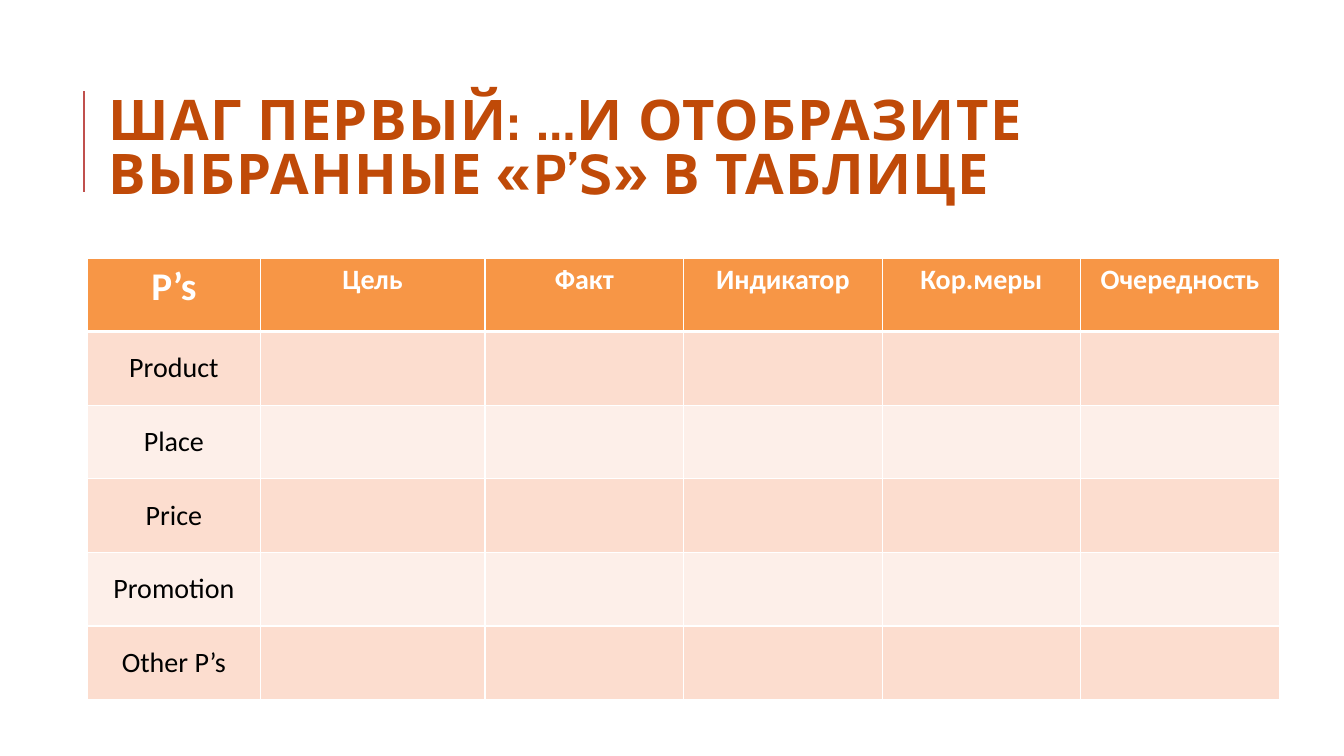
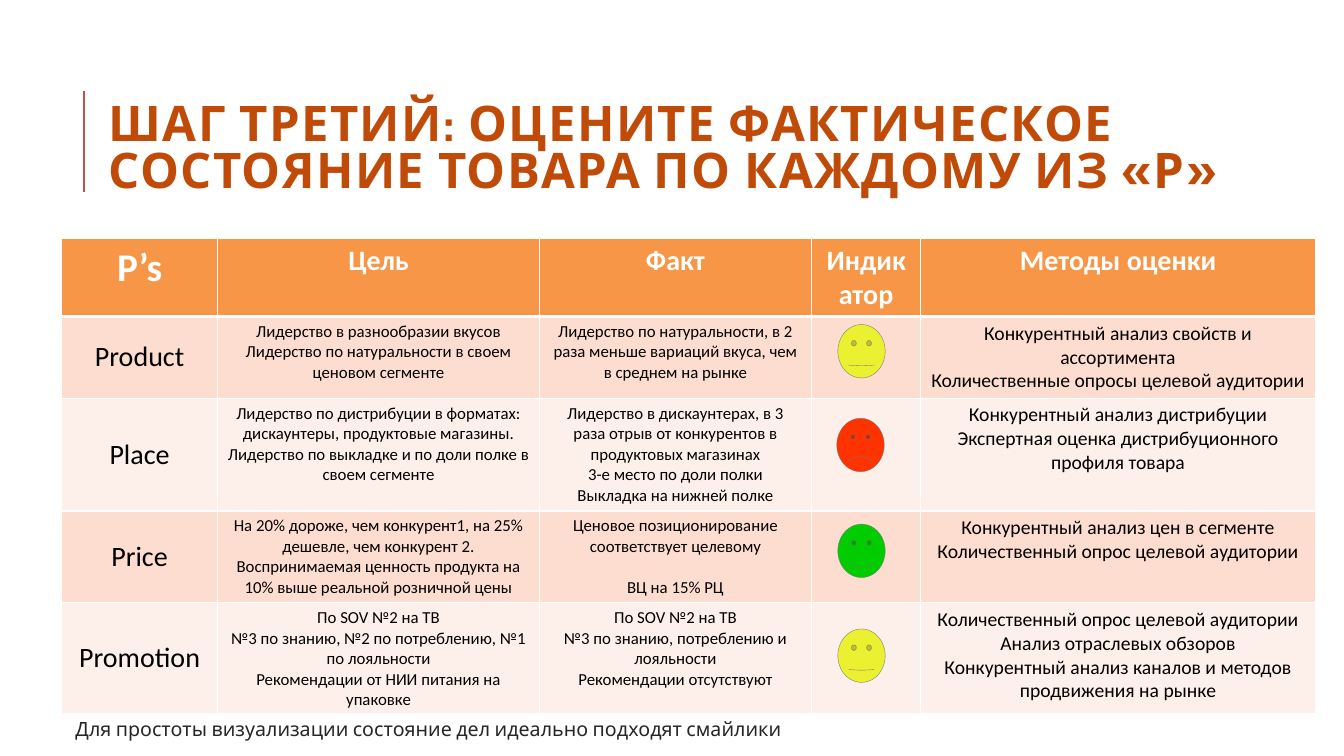
import dataclasses
import typing

import lxml.etree
import pptx
import pptx.dml.color
import pptx.enum.shapes
import pptx.enum.text
import pptx.oxml.ns
import pptx.util

Pt = pptx.util.Pt
Align = pptx.enum.text.PP_ALIGN
Anchor = pptx.enum.text.MSO_ANCHOR
Kind = pptx.enum.shapes.MSO_SHAPE
qn = pptx.oxml.ns.qn

# Shared look
RUST, RED, INK = "C04A08", "C0504D", "262626"
WHITE, BLACK, GREY = "FFFFFF", "000000", "777777"
HEAD, BANDS = "F79646", ("FCDDCF", "FDEFE9")
GREEN, YELLOW, ALERT = "00CC00", "EBF031", "FF3300"
TITLE, BODY = "Cabin", "Calibri"


@dataclasses.dataclass
class Grid:
    left: int
    top: int
    cols: list[int]
    rows: list[int]
    sizes: list[int]  # body text size by column
    cells: list[list[str]]


@dataclasses.dataclass
class Face:
    left: int
    top: int
    fill: str
    mouth: float


def px(n: int) -> int:
    """100 px to the inch."""
    return n * 9144


def rgb(code: str) -> pptx.dml.color.RGBColor:
    return pptx.dml.color.RGBColor.from_string(code)


def style(para: typing.Any, face: str, size: int, color: str, bold: bool = False) -> None:
    for run in para.runs:
        font = run.font
        font.name, font.size, font.bold = face, Pt(size), bold
        font.color.rgb = rgb(color)


def label(slide: typing.Any, box: tuple[int, int, int, int], text: str,
          size: int, color: str, lead: float, bold: bool = False) -> typing.Any:
    frame = slide.shapes.add_textbox(*map(px, box)).text_frame
    frame.word_wrap = True
    frame.vertical_anchor = Anchor.MIDDLE
    frame.text = text
    para = frame.paragraphs[0]
    para.line_spacing = lead
    style(para, TITLE, size, color, bold)
    return para


def start(deck: typing.Any, text: str, size: int) -> typing.Any:
    """Add a slide with the side rule and the title."""
    slide = deck.slides.add_slide(deck.slide_layouts[6])
    rule = slide.shapes.add_connector(
        pptx.enum.shapes.MSO_CONNECTOR.STRAIGHT, px(83), px(190), px(83), px(90))
    rule.line.color.rgb = rgb(RED)
    rule.line.width = Pt(1.5)
    lxml.etree.SubElement(rule._element.spPr, qn("a:effectLst"))
    para = label(slide, (98, 68, 1221, 164), text, size, RUST, 0.8, True)
    for run in para.runs:
        run.font._element.set("spc", "100")
    return slide


def border(cell: typing.Any, top: int, base: int) -> None:
    props = cell._tc.get_or_add_tcPr()
    widths = {"lnL": 1, "lnR": 1, "lnT": top, "lnB": base}
    for i, (tag, width) in enumerate(widths.items()):
        line = lxml.etree.Element(qn("a:" + tag), w=str(Pt(width)))
        fill = lxml.etree.SubElement(line, qn("a:solidFill"))
        lxml.etree.SubElement(fill, qn("a:srgbClr"), val=WHITE)
        props.insert(i, line)


def table(slide: typing.Any, grid: Grid) -> typing.Any:
    tab = slide.shapes.add_table(
        len(grid.rows), len(grid.cols), px(grid.left), px(grid.top),
        px(sum(grid.cols)), px(sum(grid.rows))).table
    for col, width in zip(tab.columns, grid.cols):
        col.width = px(width)
    for r, (row, high) in enumerate(zip(tab.rows, grid.rows)):
        row.height = px(high)
        head = r == 0
        for c, cell in enumerate(row.cells):
            cell.fill.solid()
            cell.fill.fore_color.rgb = rgb(HEAD if head else BANDS[(r - 1) % 2])
            border(cell, 3 if r == 1 else 1, 3 if head else 1)
            if c >= len(grid.cells[r]) or not grid.cells[r][c]:
                continue
            if c == 0 and not head:
                cell.vertical_anchor = Anchor.MIDDLE
            cell.text_frame.text = grid.cells[r][c]
            size = (20 if c else 28) if head else grid.sizes[c]
            for para in cell.text_frame.paragraphs:
                para.alignment = Align.CENTER
                style(para, BODY, size, WHITE if head else BLACK, head)
    return tab


def smile(slide: typing.Any, face: Face) -> None:
    shape = slide.shapes.add_shape(
        Kind.SMILEY_FACE, px(face.left), px(face.top), px(47), px(53))
    shape.shadow.inherit = False
    shape.adjustments[0] = face.mouth
    shape.fill.solid()
    shape.fill.fore_color.rgb = rgb(face.fill)
    shape.line.color.rgb = rgb(GREY)
    shape.line.width = Pt(0.25)


# Content
PLAN = Grid(
    87, 256, [171, 223] + [197] * 4, [73] * 6, [20] * 6,
    [["P’s", "Цель", "Факт", "Индикатор", "Кор.меры", "Очередность"],
     ["Product"], ["Place"], ["Price"], ["Promotion"], ["Other P’s"]])

STATE = Grid(
    61, 237, [155, 319, 270, 108, 392], [77, 81, 112, 91, 110], [20, 12, 12, 12, 14],
    [["P’s", "Цель", "Факт", "Индикатор", "Методы оценки"],
     ["Product",
      "Лидерство в разнообразии вкусов\n"
      "Лидерство по натуральности в своем ценовом сегменте",
      "Лидерство по натуральности, в 2 раза меньше вариаций вкуса, чем в среднем на рынке",
      "",
      "Конкурентный анализ свойств и ассортимента\n"
      "Количественные опросы целевой аудитории"],
     ["Place",
      "Лидерство по дистрибуции в форматах: дискаунтеры, продуктовые магазины.\n"
      "Лидерство по выкладке и по доли полке в своем сегменте",
      "Лидерство в дискаунтерах, в 3 раза отрыв от конкурентов в продуктовых магазинах\n"
      "3-е место по доли полки\n"
      "Выкладка на нижней полке",
      "",
      "Конкурентный анализ дистрибуции\n"
      "Экспертная оценка дистрибуционного профиля товара"],
     ["Price",
      "На 20% дороже, чем конкурент1, на 25% дешевле, чем конкурент 2.\n"
      "Воспринимаемая ценность продукта на 10% выше реальной розничной цены",
      "Ценовое позиционирование соответствует целевому\n"
      "ВЦ на 15% РЦ",
      "",
      "Конкурентный анализ цен в сегменте\n"
      "Количественный опрос целевой аудитории"],
     ["Promotion",
      "По SOV №2 на ТВ\n"
      "№3 по знанию, №2 по потреблению, №1 по лояльности\n"
      "Рекомендации от НИИ питания на упаковке",
      "По SOV №2 на ТВ\n"
      "№3 по знанию, потреблению и лояльности\n"
      "Рекомендации отсутствуют",
      "",
      "Количественный опрос целевой аудитории\n"
      "Анализ отраслевых обзоров\n"
      "Конкурентный анализ каналов и методов продвижения на рынке"]])

FACES = [
    Face(831, 322, YELLOW, 0.006),
    Face(830, 415, ALERT, -0.047),
    Face(831, 520, GREEN, 0.047),
    Face(831, 624, YELLOW, 0.006),
]


def main() -> None:
    deck = pptx.Presentation()
    deck.slide_width, deck.slide_height = px(1333), px(750)

    # Step one: empty table
    slide = start(deck, "ШАГ ПЕРВЫЙ: …И ОТОБРАЗИТЕ ВЫБРАННЫЕ «P’S» В ТАБЛИЦЕ", 40)
    table(slide, PLAN)

    # Step three: rated table
    slide = start(
        deck, "ШАГ ТРЕТИЙ: ОЦЕНИТЕ ФАКТИЧЕСКОЕ СОСТОЯНИЕ ТОВАРА ПО КАЖДОМУ ИЗ «Р»", 35)
    tab = table(slide, STATE)
    # One line of space above the last fact on price
    tab.cell(3, 2).text_frame.paragraphs[1].space_before = Pt(14.6)
    label(slide, (65, 703, 1211, 43),
          "Для простоты визуализации состояние дел идеально подходят смайлики",
          14, INK, 0.9)
    for face in FACES:
        smile(slide, face)

    deck.save("out.pptx")


if __name__ == "__main__":
    main()
